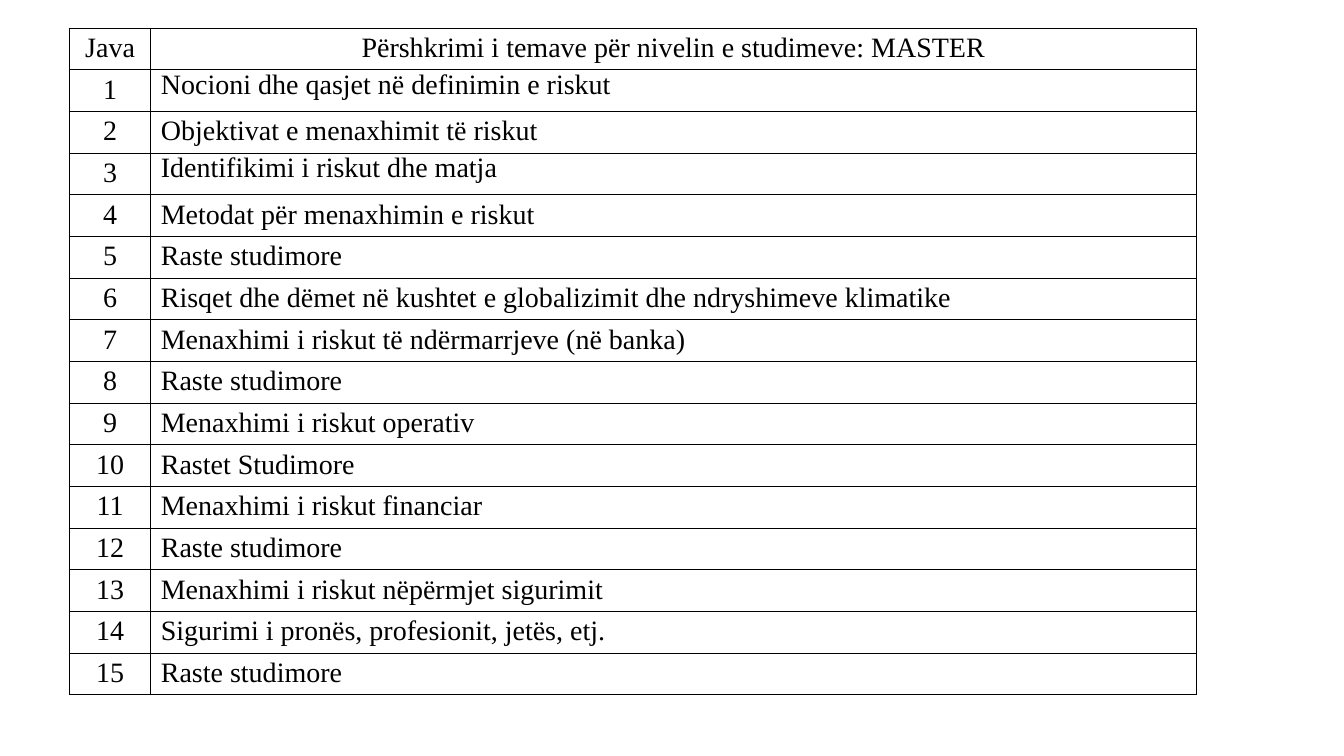
from dataclasses import dataclass

from lxml import etree
from pptx import Presentation
from pptx.dml.color import RGBColor
from pptx.enum.text import MSO_ANCHOR, PP_ALIGN
from pptx.oxml.ns import qn
from pptx.util import Cm, Pt

CENTER, LEFT, JUSTIFY = PP_ALIGN.CENTER, PP_ALIGN.LEFT, PP_ALIGN.JUSTIFY
TOP = MSO_ANCHOR.TOP


@dataclass(frozen=True)
class Theme:
    font: str = "Times New Roman"
    size: int = 20
    ink: str = "000000"
    paper: str = "FFFFFF"
    border: int = 1
    tight: float = 0.8


THEME = Theme()
HEADER = ("Java", "Përshkrimi i temave për nivelin e studimeve: MASTER")
TOPICS = [
    "Nocioni dhe qasjet në definimin e riskut",
    "Objektivat e menaxhimit të riskut",
    "Identifikimi i riskut dhe matja",
    "Metodat për menaxhimin e riskut",
    "Raste studimore",
    "Risqet dhe dëmet në kushtet e globalizimit dhe ndryshimeve klimatike",
    "Menaxhimi i riskut të ndërmarrjeve (në banka)",
    "Raste studimore",
    "Menaxhimi i riskut operativ",
    "Rastet Studimore",
    "Menaxhimi i riskut financiar",
    "Raste studimore",
    "Menaxhimi i riskut nëpërmjet sigurimit",
    "Sigurimi i pronës, profesionit, jetës, etj.",
    "Raste studimore",
]
TIGHT_WEEKS = (1, 3)
COL_WIDTHS = (Cm(2.05), Cm(26.35))
ROW_HEIGHT = Cm(1.05)


def add_borders(cell):
    tc_pr = cell._tc.get_or_add_tcPr()
    for i, side in enumerate(("a:lnL", "a:lnR", "a:lnT", "a:lnB")):
        ln = etree.Element(qn(side), w=str(Pt(THEME.border)))
        fill = etree.SubElement(ln, qn("a:solidFill"))
        etree.SubElement(fill, qn("a:srgbClr"), val=THEME.ink)
        tc_pr.insert(i, ln)


def fill_cell(cell, text, align, spacing=None):
    cell.fill.solid()
    cell.fill.fore_color.rgb = RGBColor.from_string(THEME.paper)
    cell.margin_top = cell.margin_bottom = Cm(0.11)
    cell.vertical_anchor = TOP
    add_borders(cell)
    p = cell.text_frame.paragraphs[0]
    p.text = text
    p.alignment = align
    p.line_spacing = spacing
    p.font.name = THEME.font
    p.font.size = Pt(THEME.size)
    p.font.bold = False
    p.font.color.rgb = RGBColor.from_string(THEME.ink)


def add_schedule(s, left, top):
    rows = len(TOPICS) + 1
    table = s.shapes.add_table(rows, len(COL_WIDTHS), left, top,
                               sum(COL_WIDTHS), rows * ROW_HEIGHT).table
    table.horz_banding = False
    for column, width in zip(table.columns, COL_WIDTHS):
        column.width = width
    for row in table.rows:
        row.height = ROW_HEIGHT
    for col, text in enumerate(HEADER):
        fill_cell(table.cell(0, col), text, CENTER)
    for week, topic in enumerate(TOPICS, 1):
        fill_cell(table.cell(week, 0), str(week), CENTER)
        if week in TIGHT_WEEKS:
            fill_cell(table.cell(week, 1), topic, JUSTIFY, THEME.tight)
        else:
            fill_cell(table.cell(week, 1), topic, LEFT)


def main():
    prs = Presentation()
    prs.slide_width, prs.slide_height = Cm(33.87), Cm(19.05)
    s = prs.slides.add_slide(prs.slide_layouts[6])
    add_schedule(s, Cm(1.75), Cm(0.71))
    prs.save("out.pptx")


if __name__ == "__main__":
    main()
